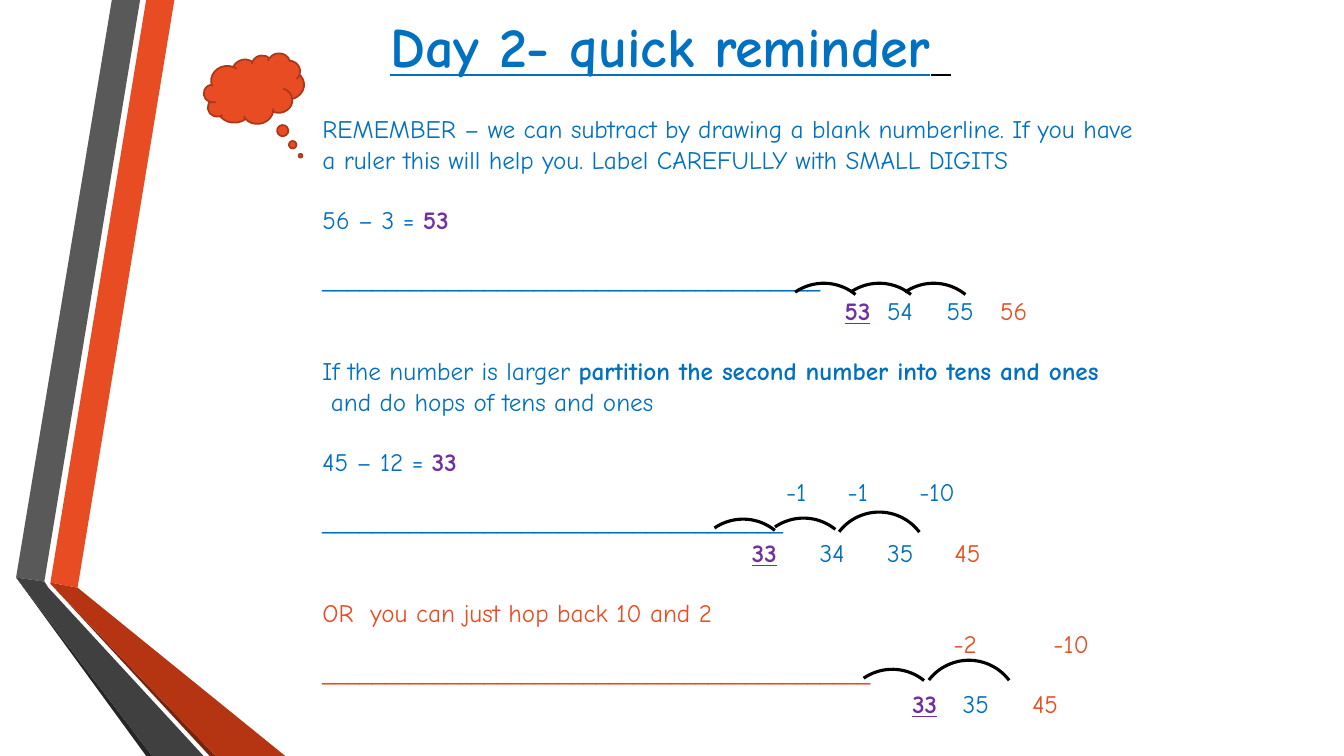
from lxml import etree
from pptx import Presentation
from pptx.dml.color import RGBColor
from pptx.enum.shapes import MSO_SHAPE
from pptx.enum.text import MSO_ANCHOR, PP_ALIGN
from pptx.oxml.ns import qn
from pptx.util import Inches, Pt

FONT = "Comic Neue"
BLUE = RGBColor(0x00, 0x70, 0xC0)
PURPLE = RGBColor(0x70, 0x30, 0xA0)
ORANGE = RGBColor(0xE8, 0x4C, 0x22)
RUST = RGBColor(0xB5, 0x35, 0x13)
DARK_RUST = RGBColor(0x78, 0x23, 0x0D)
CLOUD_EDGE = RGBColor(0xAC, 0x38, 0x19)
GREY = RGBColor(0x59, 0x59, 0x59)
DARK_GREY = RGBColor(0x40, 0x40, 0x40)
CHARCOAL = RGBColor(0x26, 0x26, 0x26)
BLACK = RGBColor(0, 0, 0)

PLAIN, BOLD, ANSWER = (False, False), (True, False), (True, True)

RIBBONS = [
    (ORANGE, [(0.5, 5.78), (0.77, 5.83), (1.73, 0), (1.45, 0)]),
    (GREY, [(1.39, 0), (1.11, 0), (0.16, 5.73), (0.44, 5.77)]),
    (CHARCOAL, [(0.16, 5.73), (1.45, 7.5), (1.51, 7.5)]),
    (DARK_RUST, [(0.5, 5.79), (2.08, 7.5), (2.14, 7.5)]),
    (RUST, [(0.5, 5.79), (2.14, 7.5), (2.83, 7.5), (0.77, 5.83), (0.5, 5.78)]),
    (DARK_GREY, [(2.02, 7.5), (0.48, 5.83), (0.44, 5.77), (0.16, 5.73), (1.51, 7.5)]),
]

TITLE = [("Day 2- quick reminder", BLUE, ANSWER), (" ", BLACK, ANSWER)]

# (starts a new block, tab stops in inches, runs)
LESSON = [
    (False, [], [("REMEMBER – we can subtract by drawing a blank numberline. If you have", BLUE, PLAIN)]),
    (False, [], [("a ruler this will help you. Label CAREFULLY with SMALL DIGITS", BLUE, PLAIN)]),
    (True, [], [("56 – 3 = ", BLUE, PLAIN), ("53", PURPLE, BOLD)]),
    (True, [], [("_" * 40, BLUE, PLAIN)]),
    (False, [5.18, 5.6, 6.19, 6.72],
     [("53", PURPLE, ANSWER), ("54", BLUE, PLAIN), ("55", BLUE, PLAIN), ("56", ORANGE, PLAIN)]),
    (True, [], [("If the number is larger ", BLUE, PLAIN),
                ("partition the second number into tens and ones", BLUE, BOLD)]),
    (False, [], [(" and do hops of tens and ones", BLUE, PLAIN)]),
    (True, [], [("45 – 12 = ", BLUE, PLAIN), ("33", PURPLE, BOLD)]),
    (False, [4.6, 5.21, 5.92], [("-1", BLUE, PLAIN), ("-1", BLUE, PLAIN), ("-10", BLUE, PLAIN)]),
    (False, [], [("_" * 37, BLUE, PLAIN)]),
    (False, [4.26, 4.93, 5.6, 6.27],
     [("33", PURPLE, ANSWER), ("34", BLUE, PLAIN), ("35", BLUE, PLAIN), ("45", ORANGE, PLAIN)]),
    (True, [], [("OR  you can just hop back 10 and 2", ORANGE, PLAIN)]),
    (False, [6.26, 7.25], [("-2", ORANGE, PLAIN), ("-10", ORANGE, PLAIN)]),
    (False, [], [("_" * 44, ORANGE, PLAIN)]),
    (False, [5.85, 6.35, 7.04],
     [("33", PURPLE, ANSWER), ("35", BLUE, PLAIN), ("45", ORANGE, PLAIN)]),
]
BLOCK_GAP = Pt(21.6)

SMALL_HOP, BIG_HOP = (171.8, 0), (161.02, 8.32)
HOPS = [
    (8.76, 2.81, SMALL_HOP), (7.67, 2.81, SMALL_HOP), (8.22, 2.81, SMALL_HOP),
    (8.22, 5.08, BIG_HOP), (7.47, 5.14, SMALL_HOP), (6.87, 5.15, SMALL_HOP),
    (9.11, 6.55, BIG_HOP), (8.35, 6.64, SMALL_HOP),
]


def add_ribbon(slide, colour, corners):
    points = [(Inches(x), Inches(y)) for x, y in corners]
    builder = slide.shapes.build_freeform(*points[0])
    builder.add_line_segments(points[1:], close=True)
    ribbon = builder.convert_to_shape()
    ribbon.shadow.inherit = False
    ribbon.fill.solid()
    ribbon.fill.fore_color.rgb = colour
    ribbon.line.fill.background()


def add_outlined(slide, kind, box, rotation, adjustments, edge, weight):
    shape = slide.shapes.add_shape(kind, *map(Inches, box))
    shape.shadow.inherit = False
    shape.rotation = rotation
    for index, value in enumerate(adjustments):
        shape.adjustments[index] = value
    shape.fill.background()
    shape.line.color.rgb = edge
    shape.line.width = Pt(weight)
    return shape


def add_frame(slide, *box):
    frame = slide.shapes.add_textbox(*map(Inches, box)).text_frame
    frame.word_wrap = True
    frame.vertical_anchor = MSO_ANCHOR.TOP
    return frame


def add_run(paragraph, text, size, colour, style):
    run = paragraph.add_run()
    run.text = text
    run.font.name = FONT
    run.font.size = Pt(size)
    run.font.color.rgb = colour
    run.font.bold, run.font.underline = style


def set_tabs(paragraph, stops):
    tabs = etree.SubElement(paragraph._p.get_or_add_pPr(), qn("a:tabLst"))
    for stop in stops:
        etree.SubElement(tabs, qn("a:tab"), pos=str(Inches(stop)), algn="l")


def main():
    deck = Presentation()
    deck.slide_width, deck.slide_height = Inches(13.33), Inches(7.5)
    slide = deck.slides.add_slide(deck.slide_layouts[6])

    for colour, corners in RIBBONS:
        add_ribbon(slide, colour, corners)

    heading = add_frame(slide, 0.9, 0.07, 11.5, 0.8).paragraphs[0]
    heading.alignment = PP_ALIGN.CENTER
    for text, colour, style in TITLE:
        add_run(heading, text, 40, colour, style)

    cloud = add_outlined(slide, MSO_SHAPE.CLOUD_CALLOUT, (2.02, 0.56, 1, 0.67),
                         352.8, (0.376, 1.049), CLOUD_EDGE, 1.25)
    cloud.fill.solid()
    cloud.fill.fore_color.rgb = ORANGE

    lesson = add_frame(slide, 3.1, 1.08, 8.83, 6.46)
    for number, (new_block, stops, runs) in enumerate(LESSON):
        line = lesson.add_paragraph() if number else lesson.paragraphs[0]
        if new_block:
            line.space_before = BLOCK_GAP
        if stops:
            set_tabs(line, stops)
        for text, colour, style in runs:
            if stops:
                add_run(line, "\t", 18, colour, PLAIN)
            add_run(line, text, 18, colour, style)

    for left, top, sweep in HOPS:
        add_outlined(slide, MSO_SHAPE.ARC, (left, top, 1, 1), 309.1, sweep, BLACK, 2.25)

    deck.save("out.pptx")


if __name__ == "__main__":
    main()
